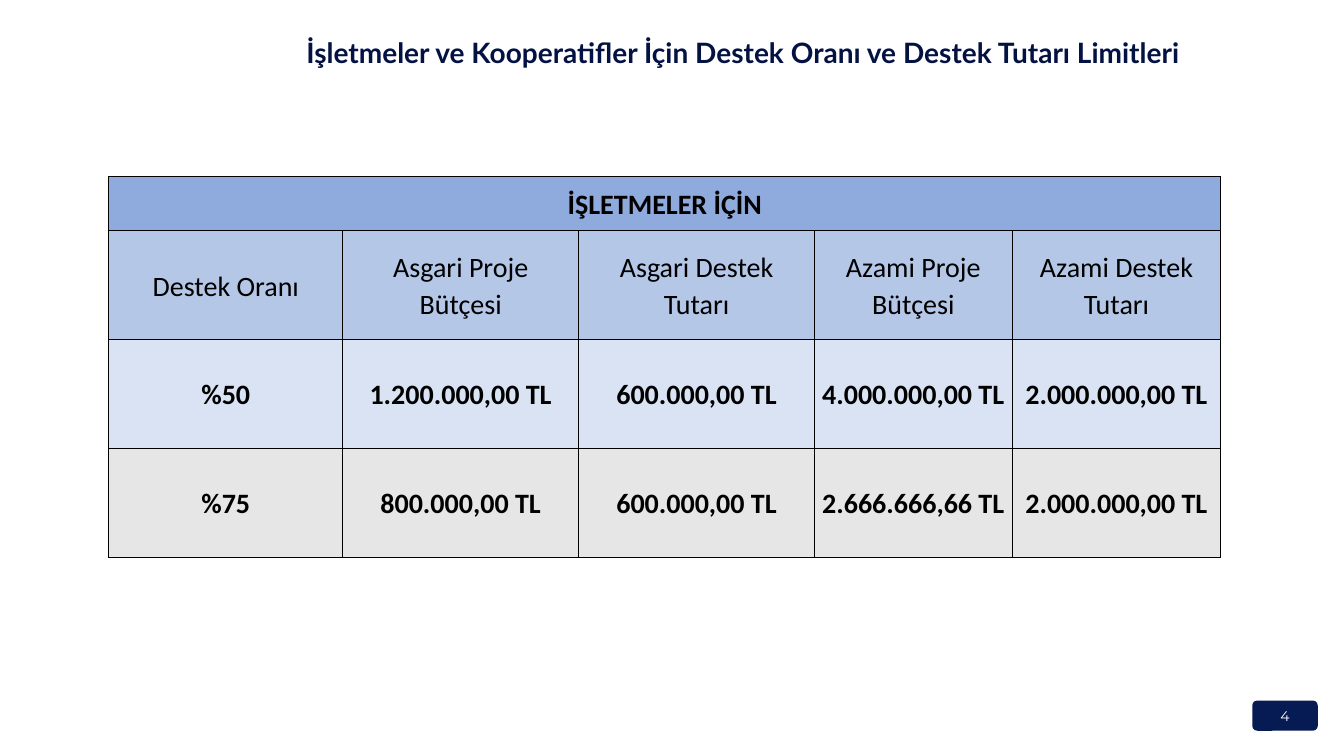
from pptx import Presentation
from pptx.dml.color import RGBColor
from pptx.enum.shapes import MSO_SHAPE
from pptx.enum.text import MSO_ANCHOR, MSO_AUTO_SIZE, PP_ALIGN
from pptx.oxml import parse_xml
from pptx.oxml.ns import nsdecls
from pptx.util import Inches, Pt

WHITE = RGBColor(0xFF, 0xFF, 0xFF)
BLACK = RGBColor(0x00, 0x00, 0x00)
NAVY = RGBColor(0x06, 0x1A, 0x53)
TITLE_NAVY = RGBColor(0x04, 0x12, 0x43)
BLUE = RGBColor(0x8F, 0xAA, 0xDC)
MID_BLUE = RGBColor(0xB4, 0xC7, 0xE7)
PALE_BLUE = RGBColor(0xDA, 0xE3, 0xF3)
GRAY = RGBColor(0xE7, 0xE6, 0xE6)

COL_WIDTHS = [2.32, 2.34, 2.34, 1.96, 2.07]
ROW_HEIGHTS = [0.54, 1.08, 1.08, 1.08]

# Each row: fill, bold, texts
ROWS = [
    (BLUE, True, ["İŞLETMELER İÇİN"]),
    (MID_BLUE, False, ["Destek Oranı", "Asgari Proje Bütçesi", "Asgari Destek Tutarı",
                       "Azami Proje Bütçesi", "Azami Destek Tutarı"]),
    (PALE_BLUE, True, ["%50", "1.200.000,00 TL", "600.000,00 TL",
                       "4.000.000,00 TL", "2.000.000,00 TL"]),
    (GRAY, True, ["%75", "800.000,00 TL", "600.000,00 TL",
                  "2.666.666,66 TL", "2.000.000,00 TL"]),
]


def add_run(p, text, font, size, color, bold=False):
    r = p.add_run()
    r.text = text
    r.font.name = font
    r.font.size = Pt(size)
    r.font.color.rgb = color
    r.font.bold = bold


def add_title(s, text):
    sp = s.shapes.add_textbox(Inches(2.94), Inches(0.3), Inches(10.3), Inches(0.44))
    tf = sp.text_frame
    tf.word_wrap = True
    tf.auto_size = MSO_AUTO_SIZE.SHAPE_TO_FIT_TEXT
    add_run(tf.paragraphs[0], text, "Lato", 20, TITLE_NAVY, bold=True)


def add_page_number(s, number):
    sp = s.shapes.add_shape(MSO_SHAPE.ROUNDED_RECTANGLE, Inches(12.42), Inches(6.95),
                            Inches(0.65), Inches(0.3))
    sp.shadow.inherit = False
    sp.fill.solid()
    sp.fill.fore_color.rgb = NAVY
    sp.line.fill.background()
    tf = sp.text_frame
    tf.vertical_anchor = MSO_ANCHOR.MIDDLE
    p = tf.paragraphs[0]
    p.alignment = PP_ALIGN.CENTER
    add_run(p, number, "Montserrat", 10, WHITE)


def style_cell(cell, fill):
    # Borders come before the fill in the cell properties
    tcPr = cell._tc.get_or_add_tcPr()
    for side in ("lnL", "lnR", "lnT", "lnB"):
        tcPr.append(parse_xml(
            f'<a:{side} {nsdecls("a")} w="{Pt(1)}"><a:solidFill>'
            f'<a:srgbClr val="{BLACK}"/></a:solidFill></a:{side}>'))
    cell.fill.solid()
    cell.fill.fore_color.rgb = fill
    cell.vertical_anchor = MSO_ANCHOR.MIDDLE
    cell.margin_left = cell.margin_right = Inches(0.07)
    cell.margin_top = cell.margin_bottom = 0


def add_support_table(s):
    table = s.shapes.add_table(len(ROWS), len(COL_WIDTHS), Inches(1.08), Inches(1.75),
                               Inches(sum(COL_WIDTHS)), Inches(sum(ROW_HEIGHTS))).table
    table.first_row = table.horz_banding = False
    for col, width in zip(table.columns, COL_WIDTHS):
        col.width = Inches(width)
    for row, height in zip(table.rows, ROW_HEIGHTS):
        row.height = Inches(height)
    table.cell(0, 0).merge(table.cell(0, len(COL_WIDTHS) - 1))

    for row, (fill, bold, texts) in zip(table.rows, ROWS):
        for cell in row.cells:
            style_cell(cell, fill)
        for cell, text in zip(row.cells, texts):
            p = cell.text_frame.paragraphs[0]
            p.alignment = PP_ALIGN.CENTER
            p.line_spacing = 1.07
            add_run(p, text, "Calibri", 20, BLACK, bold)


def main():
    prs = Presentation()
    prs.slide_width = Inches(13.33)
    prs.slide_height = Inches(7.5)
    s = prs.slides.add_slide(prs.slide_layouts[6])
    add_page_number(s, "4")
    add_title(s, "İşletmeler ve Kooperatifler İçin Destek Oranı ve Destek Tutarı Limitleri")
    add_support_table(s)
    prs.save("out.pptx")


if __name__ == "__main__":
    main()
